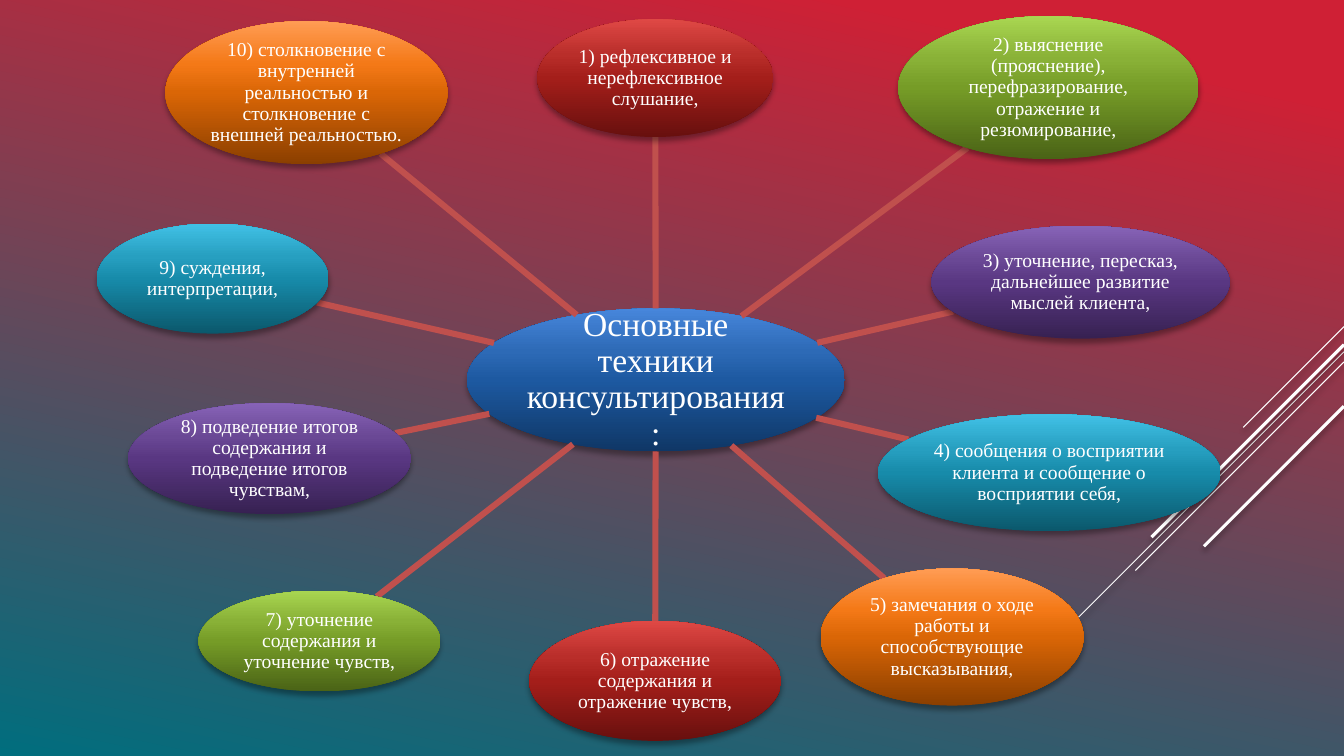
from itertools import cycle
from math import hypot

from lxml import etree
from pptx import Presentation
from pptx.dml.color import RGBColor
from pptx.enum.shapes import MSO_CONNECTOR, MSO_SHAPE
from pptx.enum.text import MSO_ANCHOR, PP_ALIGN
from pptx.oxml.ns import qn
from pptx.util import Pt

ELLIPSE = MSO_SHAPE.OVAL
STRAIGHT = MSO_CONNECTOR.STRAIGHT
CENTER = PP_ALIGN.CENTER
MIDDLE = MSO_ANCHOR.MIDDLE

WIDTH, HEIGHT = 960, 540
WHITE = "FFFFFF"
SPOKE_COLOR = "C0504D"

BACKGROUND = [(10, "CF2035"), (100, "006E7E")]


def glossy(*colors):
    return list(zip((0, 50, 70, 100), colors))


BLUE = glossy("0F3766", "1D59A1", "2D6AB6", "4786DB")
RED = glossy("68100E", "A41E1A", "B92E2A", "DF4845")
GREEN = glossy("4A6316", "769C27", "89B137", "A9D651")
PURPLE = glossy("372152", "593782", "6A4895", "8763B7")
CYAN = glossy("0B586C", "178BAA", "279FC0", "41C1E6")
ORANGE = glossy("8B3F00", "DA6606", "F47917", "FF9C54")

# Diagonals from the right edge: start height, run to the left, line width
CORNER_LINES = [
    (233.3, 72, 0.75),
    (251.3, 234.7, 0.75),
    (258.5, 149, 0.75),
    (246.2, 137.5, 2.25),
    (290.2, 100, 2.25),
]

HUB = (333.4, 220.3, 270, 102.2)
TECHNIQUES = [
    ("1) рефлексивное и нерефлексивное слушание,", (383.8, 13.7, 168.5, 84.2)),
    ("2) выяснение (прояснение), перефразирование, отражение и резюмирование,",
     (641.5, 11.5, 214.6, 102.2)),
    ("3) уточнение, пересказ, дальнейшее развитие мыслей клиента,",
     (665.3, 161.3, 213.1, 80.6)),
    ("4) сообщения о восприятии клиента и сообщение о восприятии себя,",
     (627.1, 295.9, 244.8, 83.5)),
    ("5) замечания о ходе работы и способствующие высказывания,",
     (586.1, 406.1, 187.9, 97.9)),
    ("6) отражение содержания и отражение чувств,", (378, 443.5, 180, 85.7)),
    ("7) уточнение содержания и уточнение чувств,", (141.8, 421.9, 172.8, 72)),
    ("8) подведение итогов содержания и подведение итогов чувствам,",
     (91.4, 288, 202.3, 79.2)),
    ("9) суждения, интерпретации,", (69.1, 159.8, 165.6, 78.5)),
    ("10) столкновение с внутренней реальностью и столкновение с внешней реальностью.",
     (118.1, 15.1, 201.6, 102.2)),
]


def rgb(color):
    return RGBColor.from_string(color)


def apply(target, **values):
    for name, value in values.items():
        setattr(target, name, value)


def center(box):
    left, top, width, height = box
    return left + width / 2, top + height / 2


def edge_toward(box, target):
    """Point where the ellipse in box meets the ray from its center to target."""
    x, y = center(box)
    dx, dy = target[0] - x, target[1] - y
    scale = 1 / hypot(dx / (box[2] / 2), dy / (box[3] / 2))
    return x + dx * scale, y + dy * scale


def set_gradient(fill, element, stops, angle):
    """Fill with any number of stops; the angle runs clockwise."""
    fill.gradient()
    gradient = next(element.iter(qn("a:gradFill")))
    stop_list = gradient.find(qn("a:gsLst"))
    stop_list.clear()
    for position, color in stops:
        stop = etree.SubElement(stop_list, qn("a:gs"), pos=str(position * 1000))
        etree.SubElement(stop, qn("a:srgbClr"), val=color)
    gradient.find(qn("a:lin")).set("ang", str(angle * 60000))


def set_effects(shape, shadow):
    """Replace the theme effects by a soft drop shadow or by none."""
    effects = etree.SubElement(shape.element.spPr, qn("a:effectLst"))
    if shadow:
        outer = etree.SubElement(
            effects, qn("a:outerShdw"), blurRad=str(Pt(4)), dist=str(Pt(3)),
            dir=str(90 * 60000), algn="ctr", rotWithShape="0")
        black = etree.SubElement(outer, qn("a:srgbClr"), val="000000")
        etree.SubElement(black, qn("a:alpha"), val="35000")


class RadialSlide:
    font = "Times New Roman"

    def __init__(self, presentation):
        self.slide = presentation.slides.add_slide(presentation.slide_layouts[6])

    def background(self, stops, angle):
        set_gradient(self.slide.background.fill, self.slide.element, stops, angle)

    def line(self, start, end, color, width, shadow=False):
        connector = self.slide.shapes.add_connector(
            STRAIGHT, *(Pt(value) for value in (*start, *end)))
        connector.line.color.rgb = rgb(color)
        connector.line.width = Pt(width)
        set_effects(connector, shadow)

    def ellipse(self, box, stops, text, size, inset):
        shape = self.slide.shapes.add_shape(ELLIPSE, *(Pt(value) for value in box))
        set_gradient(shape.fill, shape.element, stops, 270)
        shape.line.fill.background()
        set_effects(shape, shadow=True)
        frame = shape.text_frame
        margins = {f"margin_{side}": Pt(inset)
                   for side in ("left", "top", "right", "bottom")}
        apply(frame, word_wrap=True, vertical_anchor=MIDDLE, **margins)
        paragraph = frame.paragraphs[0]
        apply(paragraph, text=text, alignment=CENTER, line_spacing=0.9)
        font = paragraph.runs[0].font
        apply(font, name=self.font, size=Pt(size))
        font.color.rgb = rgb(WHITE)


def main():
    presentation = Presentation()
    apply(presentation, slide_width=Pt(WIDTH), slide_height=Pt(HEIGHT))
    radial = RadialSlide(presentation)
    radial.background(BACKGROUND, 102)

    for top, run, width in CORNER_LINES:
        radial.line((WIDTH, top), (WIDTH - run, top + run), WHITE, width, shadow=True)

    radial.ellipse(HUB, BLUE, "Основные техники консультирования:", 24, 1.2)
    palette = cycle([RED, GREEN, PURPLE, CYAN, ORANGE])
    for (text, box), stops in zip(TECHNIQUES, palette):
        radial.line(edge_toward(HUB, center(box)), edge_toward(box, center(HUB)),
                    SPOKE_COLOR, 4.33)
        radial.ellipse(box, stops, text, 14, 0.7)

    presentation.save("out.pptx")


if __name__ == "__main__":
    main()
